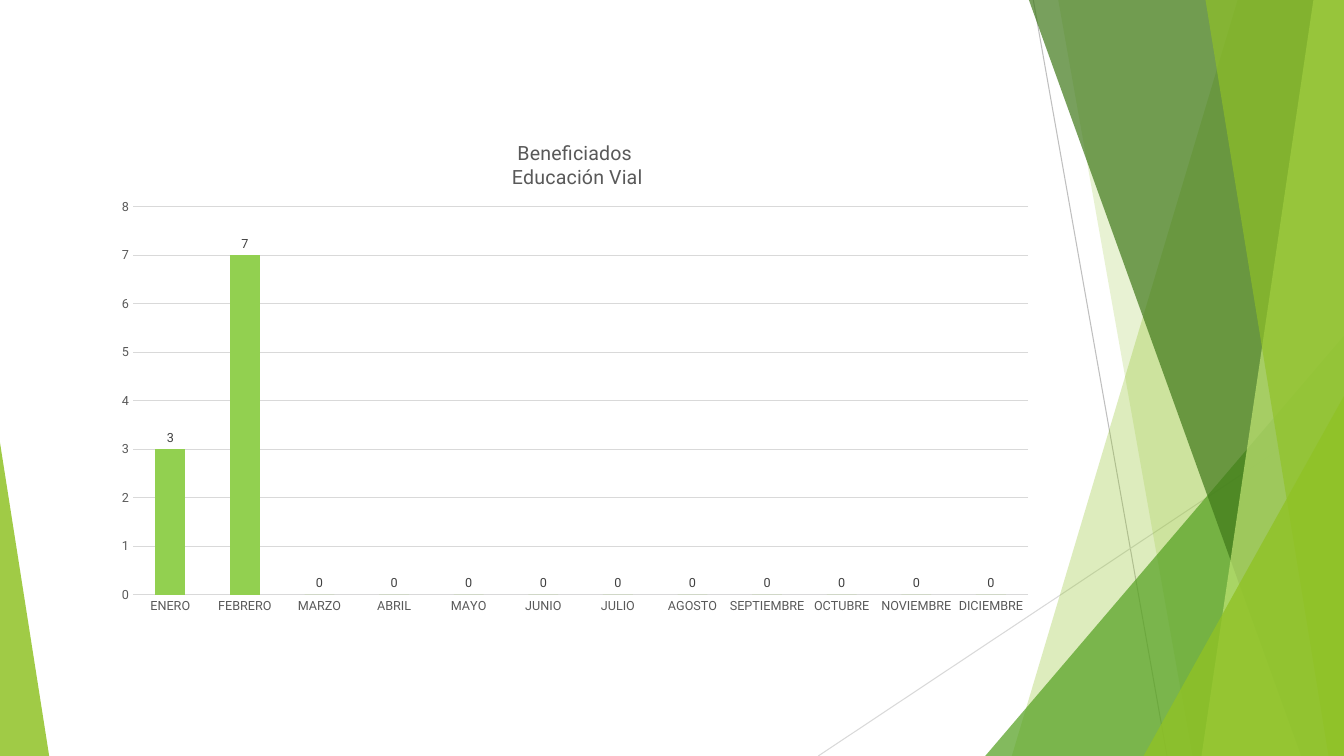
from pptx import Presentation
from pptx.chart.data import CategoryChartData
from pptx.dml.color import RGBColor
from pptx.enum import chart as ch, shapes
from pptx.oxml import ns, parse_xml, xmlchemy
from pptx.util import Cm, Pt

COLORS = {
    "lime": "90C226", "green": "54A021", "forest": "3F7819", "pale": "C0E474",
    "bar": "92D050", "grid": "D9D9D9", "ray": "BFBFBF",
    "text": "595959", "label": "404040",
}
FONT = "Roboto"
MONTHS = ["ENERO", "FEBRERO", "MARZO", "ABRIL", "MAYO", "JUNIO", "JULIO",
          "AGOSTO", "SEPTIEMBRE", "OCTUBRE", "NOVIEMBRE", "DICIEMBRE"]
BENEFICIARIES = [3, 7] + [0] * 10


def rgb(name):
    return RGBColor.from_string(COLORS[name])


def paint(shape, color, alpha):
    shape.shadow.inherit = False
    shape.fill.solid()
    shape.fill.fore_color.rgb = rgb(color)
    shape.line.fill.background()
    clr = shape.fill._xPr.find(".//" + ns.qn("a:srgbClr"))
    xmlchemy.OxmlElement("a:alpha")
    clr.append(parse_xml(f'<a:alpha {ns.nsdecls("a")} val="{alpha * 1000}"/>'))


def add_ray(s, box, start, end, color):
    left, top = box[:2]
    line = s.shapes.add_connector(
        shapes.MSO_CONNECTOR.STRAIGHT, Cm(left + start[0]), Cm(top + start[1]),
        Cm(left + end[0]), Cm(top + end[1]))
    line.line.color.rgb = rgb(color)
    line.line.width = Pt(0.75)
    line._element.spPr.append(parse_xml(f'<a:effectLst {ns.nsdecls("a")}/>'))


def add_facet(s, box, top_x, bottom_x, color, alpha):
    left, top, width, height = box
    corners = [(width, 0), (width, height), (bottom_x, height)]
    builder = s.shapes.build_freeform(Cm(left + top_x), Cm(top))
    builder.add_line_segments([(Cm(left + x), Cm(top + y)) for x, y in corners])
    paint(builder.convert_to_shape(), color, alpha)


def add_corner(s, box, width, height, apex, color, alpha):
    left = box[0] + apex * (box[2] - width)
    sp = s.shapes.add_shape(
        shapes.MSO_SHAPE.ISOSCELES_TRIANGLE, Cm(left),
        Cm(box[1] + box[3] - height), Cm(width), Cm(height))
    sp.adjustments[0] = apex
    paint(sp, color, alpha)


def add_decoration(s, box):
    add_ray(s, box, (5.42, 0), (8.79, box[3]), "ray")
    add_ray(s, box, (box[2], 10.24), (0, box[3]), "grid")
    add_facet(s, box, 10.57, 4.88, "lime", 30)
    add_facet(s, box, 6.05, 9.43, "lime", 20)
    add_corner(s, box, 9.04, 10.59, 1, "green", 72)
    add_facet(s, box, 5.31, 12.17, "forest", 70)
    add_facet(s, box, 12.48, 9.66, "pale", 70)
    add_facet(s, box, 9.76, 12.86, "lime", 65)
    add_corner(s, box, 5.05, 9.07, 1, "lime", 80)


def set_font(font, **values):
    font.color.rgb = rgb(values.pop("color"))
    for name, value in {"name": FONT, "bold": False, **values}.items():
        setattr(font, name, value)


def set_layout(parent, index, **values):
    for old in parent.findall(ns.qn("c:layout")):
        parent.remove(old)
    parts = "".join(f'<c:{k} val="{v}"/>' for k, v in values.items())
    parent.insert(index, parse_xml(
        f'<c:layout {ns.nsdecls("c")}><c:manualLayout>{parts}'
        '</c:manualLayout></c:layout>'))


def add_bar_chart(s, box):
    data = CategoryChartData()
    data.categories = MONTHS
    data.add_series("Series 1", BENEFICIARIES)
    chart = s.shapes.add_chart(
        ch.XL_CHART_TYPE.COLUMN_CLUSTERED, *map(Cm, box), data).chart
    set_font(chart.font, size=Pt(10), color="text")
    chart.has_legend = False

    chart.has_title = True
    tf = chart.chart_title.text_frame
    tf.text = "Beneficiados \nEducación Vial"
    for p in tf.paragraphs:
        for r in p.runs:
            set_font(r.font, size=Pt(14), color="text")
    set_layout(chart.chart_title._element, 1,
               xMode="edge", yMode="edge", x=0.43, y=0.04)
    set_layout(chart._chartSpace.chart.plotArea, 0, layoutTarget="inner",
               xMode="edge", yMode="edge", x=0.032, y=0.179, w=0.948, h=0.762)

    for axis in (chart.category_axis, chart.value_axis):
        axis.major_tick_mark = ch.XL_TICK_MARK.NONE
        axis.minor_tick_mark = ch.XL_TICK_MARK.NONE
        axis.format.line.fill.background()
        set_font(axis.tick_labels.font, size=Pt(9), color="text")
    values = chart.value_axis
    values.minimum_scale, values.maximum_scale, values.major_unit = 0, 8, 1
    values.has_major_gridlines = True
    values.major_gridlines.format.line.color.rgb = rgb("grid")
    values.major_gridlines.format.line.width = Pt(0.75)

    plot = chart.plots[0]
    plot.gap_width = 150
    plot.vary_by_categories = False
    fill = plot.series[0].format.fill
    fill.solid()
    fill.fore_color.rgb = rgb("bar")
    plot.has_data_labels = True
    labels = plot.data_labels
    labels.show_value = True
    labels.position = ch.XL_LABEL_POSITION.OUTSIDE_END
    set_font(labels.font, size=Pt(9), color="label")


def main():
    prs = Presentation()
    prs.slide_width, prs.slide_height = Cm(33.87), Cm(19.05)
    s = prs.slides.add_slide(prs.slide_layouts[6])
    add_decoration(s, (20.62, 0, 13.25, 19.05))
    add_corner(s, (0, 0, 33.87, 19.05), 1.24, 7.9, 0, "lime", 85)
    add_bar_chart(s, (2.59, 2.92, 23.8, 12.83))
    prs.save("out.pptx")


if __name__ == "__main__":
    main()
